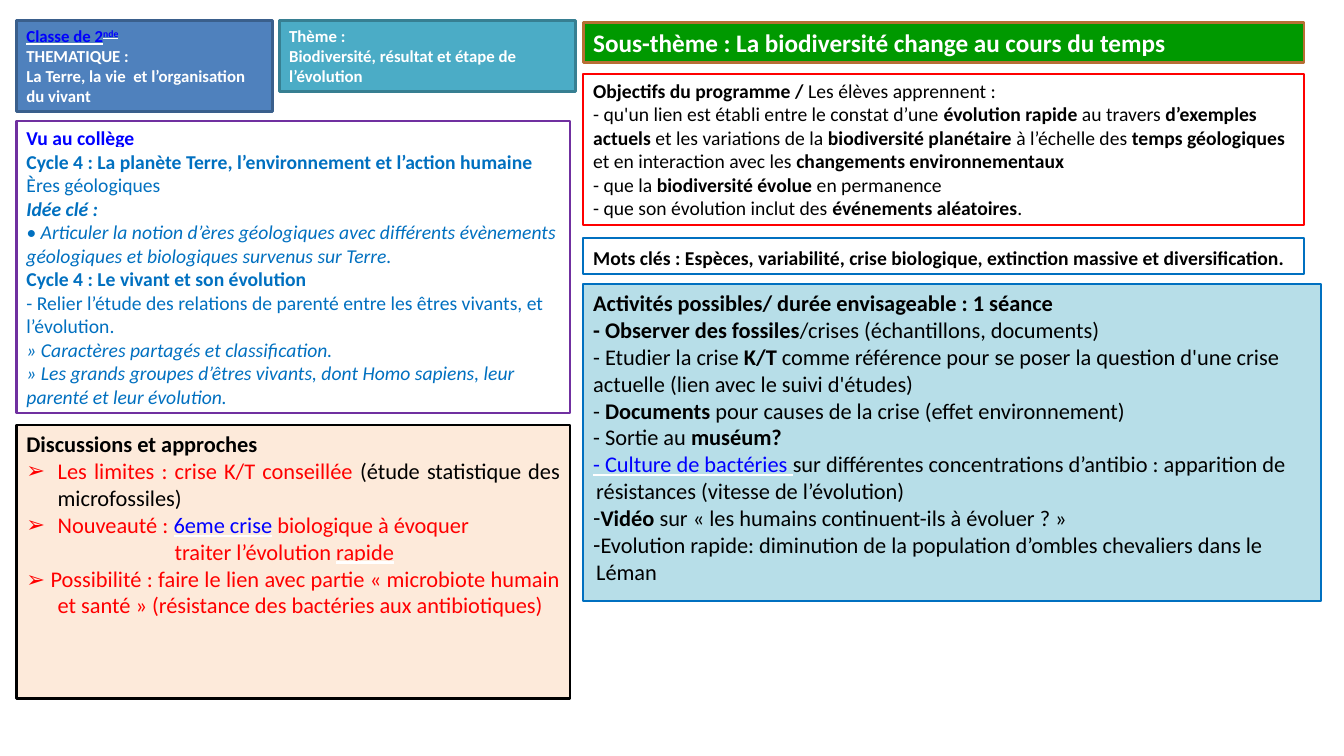
import pptx
import pptx.util
import pptx.dml.color
import pptx.enum.shapes
import pptx.enum.text
import pptx.oxml
import pptx.oxml.ns
import lxml.etree

WIDE, HIGH = pptx.util.Inches(13.33), pptx.util.Inches(7.5)
ALIGN = pptx.enum.text.PP_ALIGN
HUES = {
    "white": "FFFFFF", "black": "000000", "red": "FF0000", "link": "0000FF",
    "blue": "4F81BD", "navy": "3A5F8C", "teal": "4BACC6", "sea": "377F92",
    "green": "009900", "rust": "B76F34", "plum": "7030A0", "sky": "0070C0",
    "peach": "FDEADA", "ice": "B7DEE8",
}
# Left edges and widths, in percent of the slide's width
LEFT, RIGHT = 1.23, 43.4
HALF, MAIN = 41.18, 53.63


def paint(fmt, hue):
    fmt.rgb = pptx.dml.color.RGBColor.from_string(HUES[hue])


def add_box(slide, place, fill, edge, width=1.5):
    """Rectangle placed in percent of the slide; returns its text frame."""
    x, y, w, h = place
    box = slide.shapes.add_shape(
        pptx.enum.shapes.MSO_SHAPE.RECTANGLE,
        int(WIDE * x / 100), int(HIGH * y / 100),
        int(WIDE * w / 100), int(HIGH * h / 100))
    box.shadow.inherit = False
    if fill:
        box.fill.solid()
        paint(box.fill.fore_color, fill)
    else:
        box.fill.background()
    paint(box.line.color, edge)
    box.line.width = pptx.util.Pt(width)
    frame = box.text_frame
    frame.word_wrap = True
    frame.vertical_anchor = pptx.enum.text.MSO_ANCHOR.TOP
    return frame


def add_run(para, text, hue=None, bold=None, under=False, rise=False, face=None):
    run = para.add_run()
    run.text = text
    font = run.font
    if bold is not None:
        font.bold = bold
    if hue:
        paint(font.color, hue)
    if face:
        font.name = face
    if rise:
        run._r.get_or_add_rPr().set("baseline", "30000")
    if under:
        font.underline = True
        line = lxml.etree.SubElement(
            run._r.get_or_add_rPr(), pptx.oxml.ns.qn("a:uFill"))
        fill = lxml.etree.SubElement(line, pptx.oxml.ns.qn("a:solidFill"))
        lxml.etree.SubElement(
            fill, pptx.oxml.ns.qn("a:srgbClr"), val=HUES["white"])


def add_para(frame, size, hue, *runs, bold=False, slant=False,
             align=ALIGN.LEFT, left=0, hang=0, mark=None, tint=None):
    """A run is a plain string, or a string with a dict of its own style."""
    para = frame.paragraphs[0]
    if para.runs:
        para = frame.add_paragraph()
    para.alignment = align
    font = para.font
    font.name, font.size = "Calibri", pptx.util.Pt(size)
    font.bold, font.italic = bold, slant
    paint(font.color, hue)
    props = para._p.get_or_add_pPr()
    props.set("marL", str(pptx.util.Inches(left)))
    props.set("indent", str(pptx.util.Inches(-hang)))
    if mark:
        add_mark(props, mark, tint)
    for run in runs:
        text, style = (run, {}) if isinstance(run, str) else run
        add_run(para, text, **style)
    return para


def add_mark(props, mark, tint):
    rest = props.find(pptx.oxml.ns.qn("a:defRPr"))
    space = pptx.oxml.ns.nsdecls("a")
    for part in (f'<a:buClr {space}><a:srgbClr val="{HUES[tint]}"/></a:buClr>',
                 f'<a:buFont {space} typeface="Arial"/>',
                 f'<a:buChar {space} char="{mark}"/>'):
        rest.addprevious(pptx.oxml.parse_xml(part))


def mix(text):
    """Runs of a text whose bold parts stand between asterisks."""
    return [(part, {"bold": i % 2 == 1})
            for i, part in enumerate(text.split("*")) if part]


def add_heads(slide):
    link = {"hue": "link", "under": True}
    frame = add_box(slide, (LEFT, 2.75, 19.05, 12), "blue", "navy", 2)
    add_para(frame, 12, "white", ("Classe de 2", link),
             ("nde", {**link, "rise": True}), bold=True)
    for text in ("THEMATIQUE :", "La Terre, la vie  et l’organisation du vivant"):
        add_para(frame, 12, "white", text, bold=True)

    frame = add_box(slide, (20.78, 2.75, 22.05, 9.33), "teal", "sea", 2)
    for text in ("Thème :", "Biodiversité, résultat et étape de l’évolution"):
        add_para(frame, 12, "white", text, bold=True)

    frame = add_box(slide, (RIGHT, 2.93, MAIN, 5.33), "green", "rust", 2)
    add_para(frame, 18, "white",
             "Sous-thème : La biodiversité change au cours du temps", bold=True)


def add_goals(slide):
    frame = add_box(slide, (RIGHT, 9.75, MAIN, 20), None, "red")
    for text in (
            "*Objectifs du programme / *Les élèves apprennent :",
            "- qu'un lien est établi entre le constat d’une *évolution rapide* au "
            "travers *d’exemples actuels* et les variations de la *biodiversité "
            "planétaire* à l’échelle des *temps géologiques* et en interaction "
            "avec les *changements environnementaux*",
            "- que la *biodiversité évolue* en permanence",
            "- que son évolution inclut des *événements aléatoires*."):
        add_para(frame, 14, "black", *mix(text))


def add_past(slide):
    frame = add_box(slide, (LEFT, 16, HALF, 38.6), None, "plum")
    add_para(frame, 14, "link", ("Vu au collège", {"hue": "link", "under": True}),
             bold=True)
    for text, bold, slant in (
            ("Cycle 4 : La planète Terre, l’environnement et l’action humaine",
             True, False),
            ("Ères géologiques", False, False),
            ("Idée clé :", True, True),
            ("• Articuler la notion d’ères géologiques avec différents évènements "
             "géologiques et biologiques survenus sur Terre.", False, True),
            ("Cycle 4 : Le vivant et son évolution", True, False),
            ("- Relier l’étude des relations de parenté entre les êtres vivants, "
             "et l’évolution.", False, False),
            ("» Caractères partagés et classification.", False, True),
            ("» Les grands groupes d’êtres vivants, dont Homo sapiens, leur "
             "parenté et leur évolution.", False, True)):
        add_para(frame, 14, "sky", text, bold=bold, slant=slant)


def add_talk(slide):
    frame = add_box(slide, (LEFT, 56.27, HALF, 36.13), "peach", "black")
    just = {"align": ALIGN.JUSTIFY}
    hang = {**just, "left": 0.31, "hang": 0.31}
    arrow = {**hang, "mark": "➢", "tint": "red"}
    add_para(frame, 16, "black", "Discussions et approches", bold=True, **just)
    add_para(frame, 16, "red", "Les limites : crise K/T conseillée ",
             ("(étude statistique des microfossiles)", {"hue": "black"}), **arrow)
    add_para(frame, 16, "red", "Nouveauté : ",
             ("6eme crise", {"hue": "link", "under": True}),
             " biologique à évoquer", **arrow)
    add_para(frame, 16, "red", "traiter l’évolution ",
             ("rapide", {"hue": "red", "under": True}), left=1.47, **just)
    add_para(frame, 16, "red", ("➢", {"face": "Arial"}),
             " Possibilité : faire le lien avec partie « microbiote humain et "
             "santé » (résistance des bactéries aux antibiotiques)", **hang)


def add_tasks(slide):
    frame = add_box(slide, (RIGHT, 37.6, 54.91, 41.87), "ice", "sky")
    hang = {"left": 0.03, "hang": 0.03}
    for text in (
            "*Activités possibles/ durée envisageable : 1 séance*",
            "*- Observer des fossiles*/crises (échantillons, documents)",
            "- Etudier la crise *K/T* comme référence pour se poser la question "
            "d'une crise actuelle (lien avec le suivi d'études)",
            "- *Documents* pour causes de la crise (effet environnement)",
            "- Sortie au *muséum?*"):
        add_para(frame, 16, "black", *mix(text))
    add_para(frame, 16, "black",
             ("- Culture de bactéries ", {"hue": "link", "under": True}),
             "sur différentes concentrations d’antibio : apparition de "
             "résistances (vitesse de l’évolution)", **hang)
    for text in ("*Vidéo* sur « les humains continuent-ils à évoluer ? »",
                 "Evolution rapide: diminution de la population d’ombles "
                 "chevaliers dans le Léman"):
        add_para(frame, 16, "black", *mix(text), mark="-", tint="black", **hang)


def add_keys(slide):
    frame = add_box(slide, (RIGHT, 31.47, MAIN, 4.8), None, "sky")
    para = add_para(frame, 14, "black",
                    "Mots clés : Espèces, variabilité, crise biologique, "
                    "extinction massive et diversification.", bold=True)
    para.line_spacing = 1.15
    para.space_after = pptx.util.Pt(10)


def main():
    deck = pptx.Presentation()
    deck.slide_width, deck.slide_height = WIDE, HIGH
    slide = deck.slides.add_slide(deck.slide_layouts[6])
    for part in (add_heads, add_goals, add_past, add_talk, add_tasks, add_keys):
        part(slide)
    deck.save("out.pptx")


if __name__ == "__main__":
    main()
